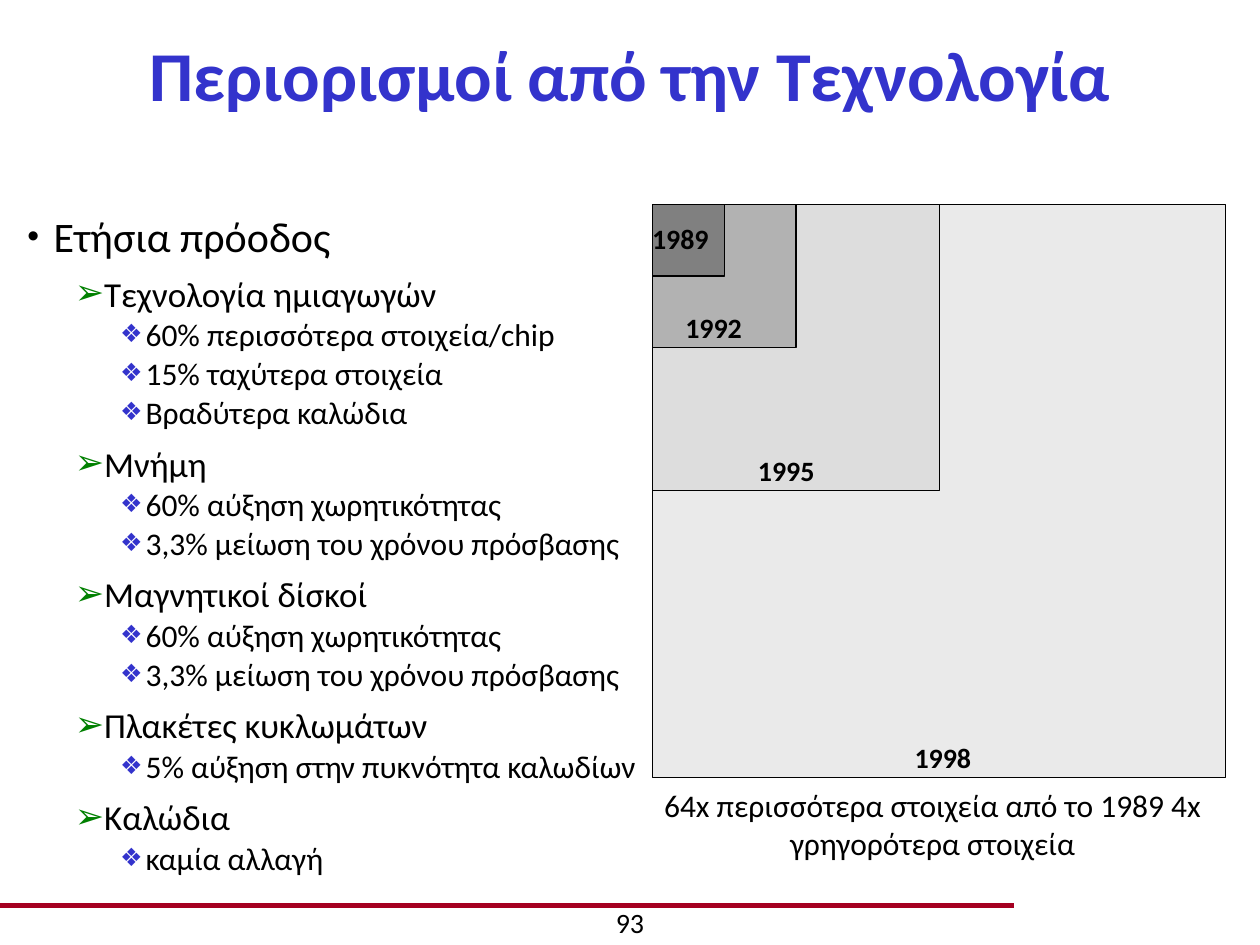
import pptx
import pptx.util
import pptx.dml.color
import pptx.enum.shapes
import pptx.enum.text
from lxml import etree

Pt = pptx.util.Pt
ALIGN = pptx.enum.text.PP_ALIGN
ANCHOR = pptx.enum.text.MSO_ANCHOR
FONT = "Calibri"
BLACK, BLUE, GREEN, RED = "000000", "3333CC", "008000", "A50021"

TITLE = "Περιορισμοί από την Τεχνολογία"
BULLETS = [
    (0, "Ετήσια πρόοδος"),
    (1, "Τεχνολογία ημιαγωγών"),
    (2, "60% περισσότερα στοιχεία/chip"),
    (2, "15% ταχύτερα στοιχεία"),
    (2, "Βραδύτερα καλώδια"),
    (1, "Μνήμη"),
    (2, "60% αύξηση χωρητικότητας"),
    (2, "3,3% μείωση του χρόνου πρόσβασης"),
    (1, "Μαγνητικοί δίσκοί"),
    (2, "60% αύξηση χωρητικότητας"),
    (2, "3,3% μείωση του χρόνου πρόσβασης"),
    (1, "Πλακέτες κυκλωμάτων"),
    (2, "5% αύξηση στην πυκνότητα καλωδίων"),
    (1, "Καλώδια"),
    (2, "καμία αλλαγή"),
]
# size, space before, left margin, indent, bullet, bullet colour, bullet size %
LEVELS = [
    (24, 0, 15, -15, "•", BLACK, 80),
    (20, 11, 40.5, -13.5, "➢", GREEN, 100),
    (18, 5, 67.5, -14.5, "❖", BLUE, 80),
]
# year, fill, left and top of the label; each chip is twice as wide as the next
CHIPS = [
    ("1998", "EAEAEA", 515.5, 419.5),
    ("1995", "DDDDDD", 426, 255.5),
    ("1992", "B2B2B2", 384.5, 174),
    ("1989", "808080", 365.5, 123),
]
CHIP_LEFT, CHIP_TOP, CHIP_SIDE = 373, 116.75, 327.5
CAPTION = "64x περισσότερα στοιχεία από το 1989 4x γρηγορότερα στοιχεία"
PAGE = "93"


def rgb(code):
    return pptx.dml.color.RGBColor.from_string(code)


def place(sp, left, top, width, height):
    sp.left, sp.top, sp.width, sp.height = Pt(left), Pt(top), Pt(width), Pt(height)


def add_run(p, text, size, color=BLACK, bold=False):
    r = p.add_run()
    r.text = text
    r.font.name, r.font.size, r.font.bold = FONT, Pt(size), bold
    r.font.color.rgb = rgb(color)


def add_label(s, box, text, size, bold=False, align=ALIGN.LEFT):
    tf = s.shapes.add_textbox(*(Pt(v) for v in box)).text_frame
    tf.word_wrap = True
    p = tf.paragraphs[0]
    p.alignment = align
    add_run(p, text, size, bold=bold)


def set_bullet(p, left, indent, char, color, percent):
    pPr = p._p.get_or_add_pPr()
    pPr.set("marL", str(Pt(left)))
    pPr.set("indent", str(Pt(indent)))
    qn = pptx.oxml.ns.qn
    clr = etree.SubElement(pPr, qn("a:buClr"))
    etree.SubElement(clr, qn("a:srgbClr"), val=color)
    etree.SubElement(pPr, qn("a:buSzPct"), val=str(percent * 1000))
    etree.SubElement(pPr, qn("a:buChar"), char=char)


def add_rule(s):
    line = s.shapes.add_connector(
        pptx.enum.shapes.MSO_CONNECTOR.STRAIGHT, Pt(0), Pt(517.5), Pt(579.5), Pt(517.5))
    line.line.color.rgb = rgb(RED)
    line.line.width = Pt(3)
    etree.SubElement(line._element.spPr, pptx.oxml.ns.qn("a:effectLst"))


def fill_title(sp):
    place(sp, 27, 18, 666, 48)
    tf = sp.text_frame
    tf.auto_size = pptx.enum.text.MSO_AUTO_SIZE.NONE
    tf.vertical_anchor = ANCHOR.MIDDLE
    p = tf.paragraphs[0]
    p.alignment = ALIGN.CENTER
    add_run(p, TITLE, 40, BLUE, bold=True)


def fill_body(sp):
    place(sp, 8.5, 122.5, 380, 402.5)
    tf = sp.text_frame
    tf.auto_size = pptx.enum.text.MSO_AUTO_SIZE.NONE
    for i, (level, text) in enumerate(BULLETS):
        p = tf.add_paragraph() if i else tf.paragraphs[0]
        size, before, *bullet = LEVELS[level]
        p.level = level
        set_bullet(p, *bullet)
        p.line_spacing = 0.8
        p.space_before = Pt(before)
        add_run(p, text, size)


def add_chips(s):
    for i, (_, fill, _, _) in enumerate(CHIPS):
        side = Pt(CHIP_SIDE / 2 ** i)
        sp = s.shapes.add_shape(pptx.enum.shapes.MSO_SHAPE.RECTANGLE,
                                Pt(CHIP_LEFT), Pt(CHIP_TOP), side, side)
        sp.shadow.inherit = False
        sp.fill.solid()
        sp.fill.fore_color.rgb = rgb(fill)
        sp.line.color.rgb = rgb(BLACK)
        sp.line.width = Pt(0.75)
    for year, _, left, top in CHIPS:
        add_label(s, (left, top, 54, 26.5), year, 16, bold=True)


def main():
    prs = pptx.Presentation()
    prs.slide_width, prs.slide_height = Pt(720), Pt(540)
    s = prs.slides.add_slide(prs.slide_layouts[1])
    add_rule(s)
    fill_title(s.shapes.title)
    fill_body(s.placeholders[1])
    add_chips(s)
    add_label(s, (365.5, 445.5, 335, 50.5), CAPTION, 18, align=ALIGN.CENTER)
    add_label(s, (246, 514, 228, 29), PAGE, 16, align=ALIGN.CENTER)
    prs.save("out.pptx")


if __name__ == "__main__":
    main()
